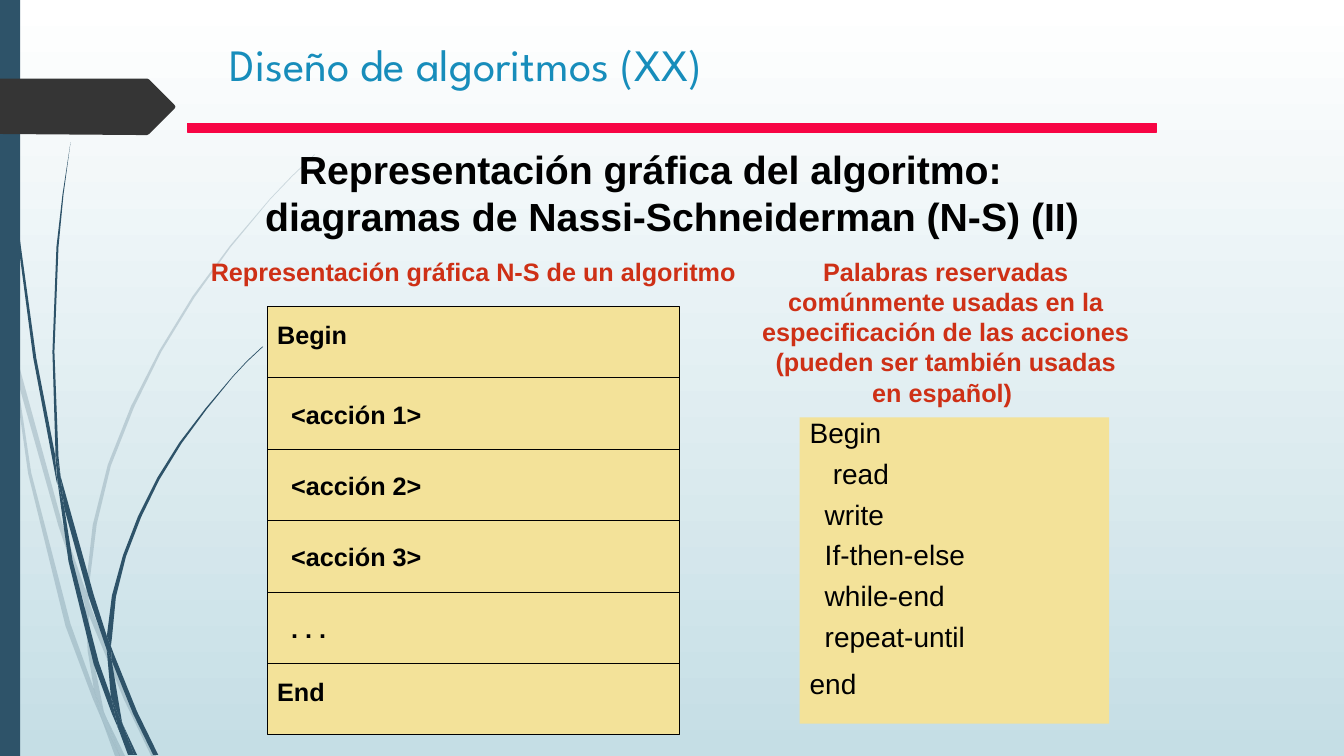
import lxml.etree
import pptx
import pptx.dml.color
import pptx.enum.shapes
import pptx.enum.text
import pptx.oxml.ns
import pptx.util

Inches = pptx.util.Inches
Pt = pptx.util.Pt
SHAPE = pptx.enum.shapes.MSO_SHAPE
ALIGN = pptx.enum.text.PP_ALIGN
ANCHOR = pptx.enum.text.MSO_ANCHOR
COLORS = {"sky": "C5DEE5", "white": "FFFFFF", "stem": "2E5369", "tag": "353535",
          "title": "178DBB", "rule": "F70544", "sand": "F3E299",
          "ink": "000000", "label": "CE3016"}

PALE = [
    [(0.11, 3.5), (0.09, 3.22), (0, 2.82), (0, 2.99), (0.1, 3.44)],
    [(0.58, 5.22), (0.84, 5.99), (0.85, 5.86), (0.62, 5.2), (0.14, 3.45), (0.17, 3.76)],
    [(0.92, 6.07), (0.88, 5.96), (0.88, 6.1), (1.23, 6.94), (1.5, 7.5), (1.55, 7.5), (1.27, 6.92)],
    [(1.19, 7.5), (1.24, 7.5), (1.05, 7.11)],
    [(0.93, 6.83), (0.7, 6.19), (0.31, 4.69), (0.17, 3.76), (0.11, 3.5), (0.28, 4.7),
     (0.65, 6.21), (0.92, 6.93), (1.01, 7.14), (0.99, 7.07)],
    [(0.84, 5.99), (0.87, 6.46), (0.93, 6.83), (0.96, 6.92), (1.05, 7.11), (1.03, 7.06),
     (0.91, 6.46), (0.88, 6.1), (0.88, 6.08)],
    [(0.88, 5.84), (0.96, 5.2), (1.1, 4.62), (1.33, 4.04), (1.6, 3.49), (1.93, 2.95),
     (2.29, 2.45), (2.68, 1.98), (2.9, 1.75), (3.12, 1.54), (3.12, 1.53), (2.89, 1.75),
     (2.68, 1.97), (2.28, 2.44), (1.91, 2.94), (1.58, 3.48), (1.3, 4.03), (1.07, 4.61),
     (0.92, 5.21), (0.85, 5.84), (0.85, 5.86), (0.88, 5.96)],
    [(1.01, 7.14), (1.14, 7.5), (1.19, 7.5)],
    [(0.88, 6.08), (0.88, 6.1), (0.88, 5.96), (0.85, 5.86), (0.84, 5.99)],
    [(0.96, 6.92), (0.93, 6.83), (0.99, 7.07), (1.01, 7.14), (1.19, 7.5), (1.05, 7.11)],
]
DARK = [
    [(0.07, 1.1), (0.17, 2.33), (0.33, 3.55), (0.56, 4.77), (0.57, 4.81), (0.55, 4.57),
     (0.55, 4.53), (0.36, 3.55), (0.19, 2.32), (0.08, 1.09), (0.05, 0.48), (0.04, 0),
     (0.03, 0), (0.04, 0.48)],
    [(0.88, 5.92), (1.06, 6.45), (1.06, 6.33), (1.06, 6.31), (0.93, 5.9), (0.6, 4.72), (0.64, 5.05)],
    [(1.13, 6.49), (1.1, 6.41), (1.11, 6.56), (1.32, 7.08), (1.52, 7.49), (1.57, 7.49), (1.36, 7.06)],
    [(1.1, 6.91), (0.98, 6.57), (0.72, 5.56), (0.64, 5.05), (0.57, 4.77), (0.68, 5.57),
     (0.93, 6.59), (1.11, 7.08), (1.17, 7.22), (1.16, 7.17)],
    [(0.6, 4.72), (0.58, 4.53), (0.54, 3.49), (0.58, 2.45), (0.63, 1.93), (0.7, 1.41),
     (0.62, 1.93), (0.56, 2.45), (0.52, 3.49), (0.55, 4.49)],
    [(1.33, 7.49), (1.36, 7.49), (1.22, 7.19)],
    [(0.57, 4.77), (0.64, 5.05), (0.6, 4.72), (0.55, 4.49), (0.55, 4.53)],
    [(1.11, 6.33), (1.15, 5.92), (1.25, 5.52), (1.4, 5.13), (1.58, 4.76), (1.8, 4.4),
     (2.05, 4.06), (2.31, 3.74), (2.45, 3.59), (2.61, 3.44), (2.6, 3.44), (2.45, 3.58),
     (2.31, 3.73), (2.04, 4.05), (1.78, 4.39), (1.56, 4.74), (1.37, 5.12), (1.22, 5.51),
     (1.11, 5.91), (1.06, 6.31), (1.1, 6.41)],
    [(1.17, 7.22), (1.27, 7.49), (1.31, 7.49)],
    [(1.06, 6.45), (1.1, 6.91), (1.16, 7.06), (1.22, 7.19), (1.21, 7.16), (1.11, 6.56), (1.09, 6.51)],
    [(1.06, 6.45), (1.09, 6.51), (1.11, 6.56), (1.1, 6.41), (1.06, 6.31), (1.06, 6.33)],
    [(1.16, 7.06), (1.1, 6.91), (1.16, 7.17), (1.17, 7.22), (1.3, 7.49), (1.33, 7.49), (1.22, 7.19)],
]
TIP = [(1.73, 1.08), (1.48, 1.33), (1.46, 1.34), (1.36, 1.34), (0, 1.33), (0, 0.78),
       (1.36, 0.78), (1.46, 0.78), (1.48, 0.79), (1.73, 1.04), (1.74, 1.06)]
STEPS = ["Begin", "<acción 1>", "<acción 2>", "<acción 3>", ". . .", "End"]
WORDS = [("Begin", 0), ("read", 0.23), ("write", 0.15), ("If-then-else", 0.15),
         ("while-end", 0.15), ("repeat-until", 0.15), ("end", 0)]


def tint(name):
    return pptx.dml.color.RGBColor.from_string(COLORS[name])


def paint(shape, fill, line=None):
    shape.shadow.inherit = False
    shape.fill.solid()
    shape.fill.fore_color.rgb = tint(fill)
    if line:
        shape.line.color.rgb = tint(line)
        shape.line.width = Pt(0.75)
    else:
        shape.line.fill.background()


def style(para, size, color, bold=False, font="Arial"):
    for run in para.runs:
        run.font.size = Pt(size)
        run.font.name = font
        run.font.bold = bold
        run.font.color.rgb = tint(color)


def indent(para, left=0, right=0):
    props = para._p.get_or_add_pPr()
    props.set("marL", str(Inches(left)))
    props.set("marR", str(Inches(right)))
    props.set("indent", "0")


def place(shape, box):
    shape.left, shape.top, shape.width, shape.height = map(Inches, box)


def block(slide, box, fill, line=None):
    shape = slide.shapes.add_shape(SHAPE.RECTANGLE, *map(Inches, box))
    paint(shape, fill, line)
    return shape


def label(slide, box, lines, size, color, align=ALIGN.CENTER):
    frame = slide.shapes.add_textbox(*map(Inches, box)).text_frame
    frame.word_wrap = True
    frame.text = "\n".join(lines)
    for para in frame.paragraphs:
        para.alignment = align
        indent(para)
        style(para, size, color, True)
    return frame


def outline(slide, box, points, color):
    left, top = box[:2]
    spots = [(Inches(left + x), Inches(top + y)) for x, y in points]
    pen = slide.shapes.build_freeform(*spots[0])
    pen.add_line_segments(spots[1:], close=True)
    shape = pen.convert_to_shape()
    paint(shape, color)
    return shape


def backdrop(slide, box):
    left, top, width, height = box
    fill = slide.background.fill
    fill.gradient()
    fill.gradient_angle = 270
    for stop, name, spot in zip(fill.gradient_stops, ("white", "sky"), (0, 1)):
        stop.color.rgb = tint(name)
        stop.position = spot
    for points in PALE:
        shape = outline(slide, box, points, "stem")
        color = shape.fill._xPr.find(".//" + pptx.oxml.ns.qn("a:srgbClr"))
        lxml.etree.SubElement(color, pptx.oxml.ns.qn("a:alpha")).set("val", "20000")
    for points in DARK:
        outline(slide, box, points, "stem")
    block(slide, (left, top, 0.2, height), "stem")
    outline(slide, box, TIP, "tag")


def header(slide, box):
    left, top, width, height = box
    title = slide.shapes.title
    place(title, (left + 0.32, top, 9.06, 1.02))
    frame = title.text_frame
    frame.text = "Diseño de algoritmos (XX)"
    frame.vertical_anchor = ANCHOR.MIDDLE
    frame.margin_bottom = Inches(0.23)
    frame.paragraphs[0].alignment = ALIGN.LEFT
    style(frame.paragraphs[0], 32, "title", font="League Spartan")
    block(slide, (left, top + 1.02, width, 0.08), "rule", "rule")
    lines = ["Representación gráfica del algoritmo:",
             "diagramas de Nassi-Schneiderman (N-S) (II)"]
    frame = label(slide, (left, top + 1.18, width, 1.03), lines, 28, "ink")
    indent(frame.paragraphs[0], right=0.43)


def chart(slide, box):
    left, top, width, height = box
    label(slide, (left - 0.71, top - 0.55, 5.51, 0.4),
          ["Representación gráfica N-S de un algoritmo"], 18, "label")
    frame = block(slide, box, "sand", "ink")
    row = height / len(STEPS)
    for i, step in enumerate(STEPS):
        y = top + i * row
        inner = 0 < i < len(STEPS) - 1
        if i:
            line = slide.shapes.add_connector(
                pptx.enum.shapes.MSO_CONNECTOR.STRAIGHT,
                Inches(left), Inches(y), Inches(left + width), Inches(y))
            line.line.color.rgb = tint("ink")
            line.line.width = Pt(0.75)
            lxml.etree.SubElement(line._element.spPr, pptx.oxml.ns.qn("a:effectLst"))
            if i * 2 == len(STEPS):
                line.begin_connect(frame, 1)
                line.end_connect(frame, 3)
        text = label(slide, (left, y + (0.16 if inner else 0.08), width, 0.4),
                     [step], 18, "ink", ALIGN.LEFT)
        indent(text.paragraphs[0], 0.14 if inner else 0)


def glossary(slide, box):
    left, top, width, height = box
    label(slide, (left - 0.48, top - 1.65, 3.86, 1.6),
          ["Palabras reservadas comúnmente usadas en la especificación de las "
           "acciones (pueden ser también usadas en español) "], 18, "label")
    body = slide.placeholders[1]
    place(body, box)
    body.fill.solid()
    body.fill.fore_color.rgb = tint("sand")
    frame = body.text_frame
    frame.vertical_anchor = ANCHOR.TOP
    frame.auto_size = pptx.enum.text.MSO_AUTO_SIZE.NONE
    frame.text = "\n".join(word for word, _ in WORDS)
    for i, (para, (word, inset)) in enumerate(zip(frame.paragraphs, WORDS)):
        para.space_before = Pt(9.8 if i else 0)
        para.line_spacing = 1.0 if word == "end" else 0.8
        indent(para, inset)
        lxml.etree.SubElement(para._p.pPr, pptx.oxml.ns.qn("a:buNone"))
        style(para, 20, "ink")


def main():
    deck = pptx.Presentation()
    deck.slide_width, deck.slide_height = Inches(13.33), Inches(7.5)
    slide = deck.slides.add_slide(deck.slide_layouts[1])
    backdrop(slide, (0, 0, 13.33, 7.5))
    header(slide, (1.86, 0.21, 9.61, 2.21))
    chart(slide, (2.65, 3.04, 4.09, 4.25))
    glossary(slide, (7.93, 4.14, 3.07, 3.04))
    deck.save("out.pptx")


if __name__ == "__main__":
    main()
